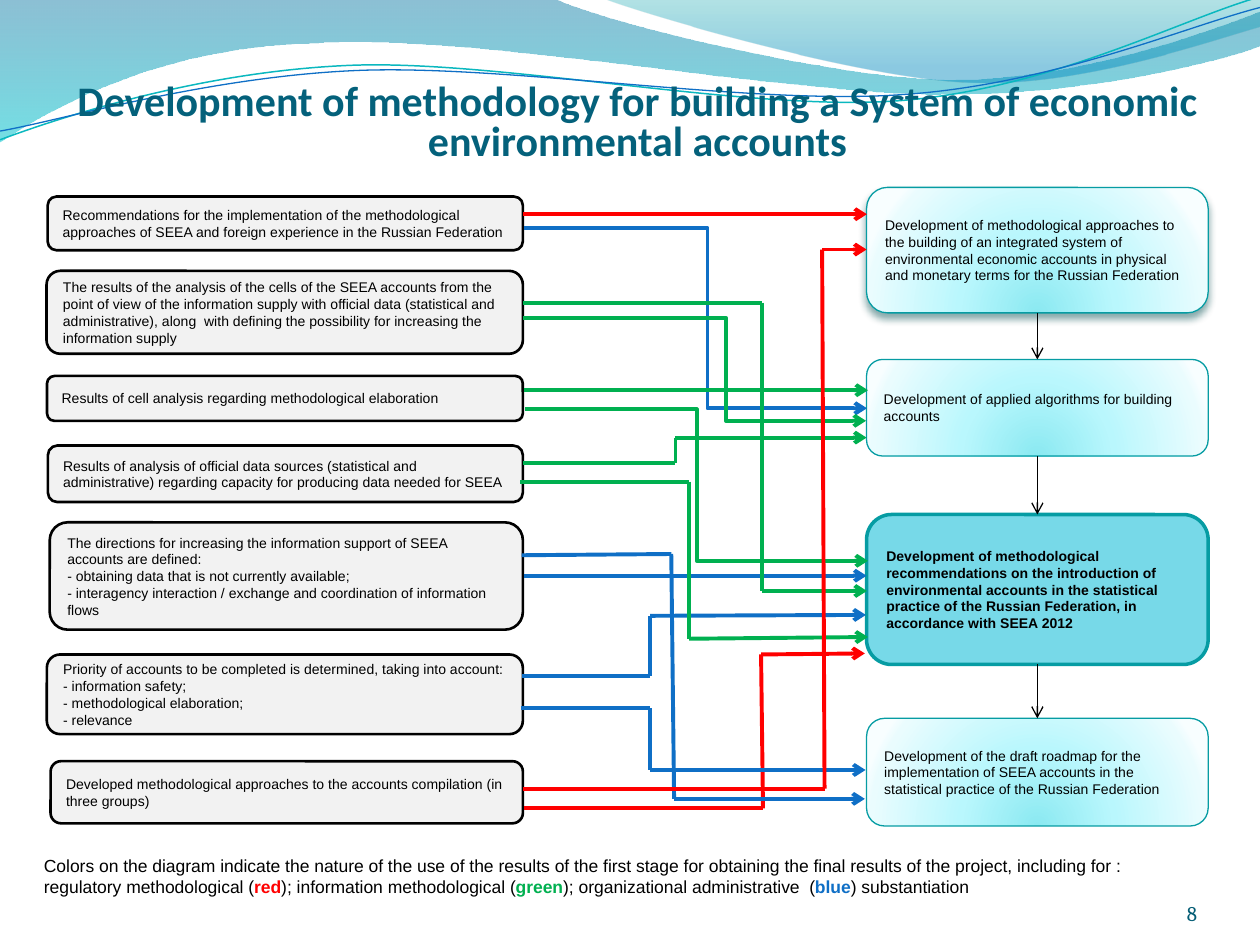
import math

from lxml import etree
from pptx import Presentation
from pptx.dml.color import RGBColor
from pptx.enum import shapes, text
from pptx.oxml import parse_xml
from pptx.oxml.ns import qn
from pptx.util import Pt

NAMESPACE = 'xmlns:a="http://schemas.openxmlformats.org/drawingml/2006/main"'
RED, GREEN, BLUE = "FF0000", "00B050", "0F6FC6"
BLACK, GREY, TEAL = "000000", "F2F2F2", "069CA3"
STRAIGHT, ELBOW = shapes.MSO_CONNECTOR.STRAIGHT, shapes.MSO_CONNECTOR.ELBOW

# Gradients: (position %, colour, opacity %) and direction
CIRCLE = ('<a:path path="circle"><a:fillToRect l="50000" t="130000" '
          'r="50000" b="-30000"/></a:path>')
DOWNWARD = '<a:lin ang="5400000" scaled="0"/>'
GLOW = [(0, "8BE9F1", 100), (43, "B9F7FD", 100), (93, "EAFCFE", 100), (100, "F8FEFF", 100)]

# Each wave: start point, then cubic curves or single points
WAVE_BACK = [(0, 0), (316.8, -0.7), (342.7, 12.2, 478.1, 45.4, 545.8, 45.4),
             (614.2, 45.4, 689.8, 18.7, 720, 6.5), (720.7, 25.9),
             (707.8, 31.7, 626.4, 54.7, 537.1, 54), (447.8, 54, 275, 20.2, 185, 24.5),
             (92.9, 25.9, 33.1, 59.8, -0.7, 81.4)]
WAVE_RIGHT = [(344.9, -0.7), (366.5, 7.9, 491, 44.6, 553.7, 46.8),
              (616.3, 49.7, 691.9, 23, 720, 15.1), (720, 0)]
CURVE_TEAL = [(0, 79.9), (34.6, 67, 113.8, 41, 199.4, 37.4),
              (284.4, 33.8, 427, 64.1, 513.4, 57.6), (599.8, 51.1, 675.4, 10.8, 718.6, -1.4)]
CURVE_BLUE = [(0, 74.9), (33.8, 69.1, 118.1, 43.9, 203.8, 40.3),
              (290.2, 36.7, 429.8, 60.5, 516.2, 54), (601.9, 48.2, 677.5, 15.1, 720, 4.3)]

# Source boxes: left, top, height, paragraphs
SOURCES = [
    (27.2, 112.3, 30.7, ["Recommendations for the implementation of the methodological approaches of SEEA and foreign experience in the Russian Federation"]),
    (26.6, 154.8, 47.4, ["The results of the analysis of the cells of the SEEA accounts from the point of view of the information supply with official data (statistical and administrative), along  with defining the possibility for increasing the information supply"]),
    (28.9, 435, 35.5, ["Developed methodological approaches to the accounts compilation (in three groups)"]),
    (26.9, 214.8, 25.7, ["Results of cell analysis regarding methodological elaboration"]),
    (27.4, 254.6, 32.3, ["Results of analysis of official data sources (statistical and administrative) regarding capacity for producing data needed for SEEA"]),
    (26.8, 374, 45.5, ["Priority of accounts to be completed is determined, taking into account:",
                       "- information safety;", "- methodological elaboration;", "- relevance"]),
    (28.4, 298.5, 61.3, ["The directions for increasing the information support of SEEA accounts are defined:",
                         "- obtaining data that is not currently available;",
                         "- interagency interaction / exchange and coordination of information flows"]),
]
# Result boxes: top, height, text
RESULTS = [
    (107.1, 71.7, "Development of methodological approaches to the building of an integrated system of environmental economic accounts in physical and monetary terms for the Russian Federation"),
    (205.4, 55.2, "Development of applied algorithms for building accounts"),
    (294, 85.7, "Development of methodological recommendations on the introduction of environmental accounts in the statistical practice of the Russian Federation, in accordance with SEEA 2012"),
    (410.5, 61.5, "Development of the draft roadmap for the implementation of SEEA accounts in the statistical practice of the Russian Federation"),
]
HIGHLIGHTED = 2
# Routes drawn leg by leg through their corners; the last leg has the arrowhead
ROUTES = [
    (RED, [(299, 122.4), (495.4, 122.4)]),
    (RED, [(299.5, 461.9), (436, 461.9), (434.9, 374), (494.2, 373.4)]),
    (BLUE, [(298.1, 386.1), (371.5, 386.1), (371.5, 351.9), (494.8, 351.4)]),
    (BLUE, [(299.3, 329), (495.2, 329)]),
    (BLUE, [(297.7, 404.6), (371.2, 404.6), (371.2, 440), (494.6, 440)]),
    (BLUE, [(298.1, 317.3), (383.6, 316.6), (385.2, 456.5), (494.2, 456.5)]),
    (GREEN, [(298.8, 264.7), (386, 264.7), (386, 250.1), (495.2, 250.1)]),
    (GREEN, [(298.8, 173), (435.6, 173), (435.6, 337.7), (495.4, 337.7)]),
    (GREEN, [(297.4, 275.3), (393.8, 275.3), (393.8, 365), (496, 364)]),
    (GREEN, [(299.5, 223), (496, 223)]),
    (RED, [(298.8, 450.7), (471.2, 450.7), (469.8, 142.6), (495.2, 142.6)]),
]
# Elbow routes: colour, start, end, share of the width before the bend
ELBOWS = [
    (BLUE, (299.5, 130.3), (495.4, 233.3), 0.535),
    (GREEN, (298.8, 181.6), (494.9, 240.5), 0.592),
    (GREEN, (300.2, 234), (496, 320.5), 0.5),
]


def color(value):
    return RGBColor.from_string(value)


def format_run(run, size, value, font="Arial", bold=False):
    run.font.size, run.font.name, run.font.bold = Pt(size), font, bold
    run.font.color.rgb = color(value)


def fill_gradient(shape, stops, direction):
    stop_xml = "".join(
        f'<a:gs pos="{position * 1000}"><a:srgbClr val="{value}">'
        f'<a:alpha val="{opacity * 1000}"/></a:srgbClr></a:gs>'
        for position, value, opacity in stops)
    shape.fill.background()
    properties = shape._element.spPr
    properties.replace(properties.find(qn("a:noFill")), parse_xml(
        f'<a:gradFill {NAMESPACE} rotWithShape="1"><a:gsLst>{stop_xml}</a:gsLst>{direction}</a:gradFill>'))


def turn(step, angle, center):
    """Rotate every point of a path step about the center."""
    cosine, sine = math.cos(math.radians(angle)), math.sin(math.radians(angle))
    turned = []
    for x, y in zip(step[::2], step[1::2]):
        dx, dy = x - center[0], y - center[1]
        turned += [center[0] + dx * cosine - dy * sine, center[1] + dx * sine + dy * cosine]
    return turned


def add_wave(slide, curve, closed):
    """Build the outline from its end points, then bend the curved steps."""
    builder = slide.shapes.build_freeform(*map(Pt, curve[0]))
    builder.add_line_segments([tuple(map(Pt, step[-2:])) for step in curve[1:]], close=closed)
    shape = builder.convert_to_shape()
    shape.shadow.inherit = False
    for line, step in zip(list(shape._element.iter(qn("a:lnTo"))), curve[1:]):
        if len(step) == 6:
            bend = etree.Element(qn("a:cubicBezTo"))
            for x, y in zip(step[::2], step[1::2]):
                etree.SubElement(bend, qn("a:pt"), x=str(Pt(x) - shape.left), y=str(Pt(y) - shape.top))
            line.getparent().replace(line, bend)
    return shape


def add_waves(slide):
    for curve, stops in ((WAVE_BACK, [(0, "0074A1", 45), (100, "00C6CF", 55)]),
                         (WAVE_RIGHT, [(0, "00A1A9", 30), (80, "008BBF", 45)])):
        wave = add_wave(slide, curve, True)
        fill_gradient(wave, stops, DOWNWARD)
        wave.line.fill.background()
    for curve, value, width in ((CURVE_TEAL, "0AB8BF", 0.85), (CURVE_BLUE, BLUE, 0.75)):
        wave = add_wave(slide, [turn(step, 2.7, (359.6, 42)) for step in curve], False)
        wave.rotation = 357.3
        wave.fill.background()
        wave.line.color.rgb, wave.line.width = color(value), Pt(width)


def set_title(slide, left, top, width, height):
    title = slide.shapes.title
    slide.shapes._spTree.append(title._element)  # in front of the waves
    title.left, title.top, title.width, title.height = map(Pt, (left, top, width, height))
    frame = title.text_frame
    frame.text = "Development of methodology for building a System of economic environmental accounts"
    frame.auto_size, frame.vertical_anchor = text.MSO_AUTO_SIZE.NONE, text.MSO_ANCHOR.BOTTOM
    frame.margin_left = frame.margin_right = frame.margin_bottom = 0
    frame.margin_top = Pt(3.6)
    paragraph = frame.paragraphs[0]
    paragraph.alignment, paragraph.line_spacing = text.PP_ALIGN.CENTER, 0.8
    format_run(paragraph.runs[0], 24, "04617B", "Calibri", True)


def add_box(slide, left, top, width, height, lines, outline, line_width, bold=False):
    box = slide.shapes.add_shape(shapes.MSO_SHAPE.ROUNDED_RECTANGLE,
                                 *map(Pt, (left, top, width, height)))
    box.shadow.inherit = False
    box.line.color.rgb, box.line.width = color(outline), Pt(line_width)
    frame = box.text_frame
    frame.word_wrap, frame.vertical_anchor = True, text.MSO_ANCHOR.MIDDLE
    frame.text = "\n".join(lines)
    for paragraph in frame.paragraphs:
        paragraph.alignment = text.PP_ALIGN.LEFT
        format_run(paragraph.runs[0], 8, BLACK, bold=bold)
    return box


def add_sources(slide, right):
    for left, top, height, lines in SOURCES:
        box = add_box(slide, left, top, right - left, height, lines, BLACK, 1.5)
        box.fill.solid()
        box.fill.fore_color.rgb = color(GREY)


def add_line(slide, kind, start, end, value, width, head=True):
    line = slide.shapes.add_connector(kind, *map(Pt, start + end))
    line.line.color.rgb, line.line.width = color(value), Pt(width)
    if head:
        etree.SubElement(line.line._get_or_add_ln(), qn("a:tailEnd"), type="arrow")
    etree.SubElement(line._element.spPr, qn("a:effectLst"))
    return line


def add_results(slide, left, width):
    boxes = []
    for index, (top, height, label) in enumerate(RESULTS):
        strong = index == HIGHLIGHTED
        box = add_box(slide, left, top, width, height, [label], TEAL, 2 if strong else 0.75, strong)
        if strong:
            box.fill.solid()
            box.fill.fore_color.rgb = color("77D9E8")
        else:
            fill_gradient(box, GLOW, CIRCLE)
        boxes.append(box)
    # Soft shadow under the first result
    boxes[0]._element.spPr.find(qn("a:effectLst")).append(parse_xml(
        f'<a:outerShdw {NAMESPACE} blurRad="57150" dist="38100" dir="5400000" rotWithShape="0">'
        '<a:srgbClr val="024B4E"><a:alpha val="48000"/></a:srgbClr></a:outerShdw>'))
    for upper, lower in zip(boxes, boxes[1:]):
        arrow = add_line(slide, STRAIGHT, (0, 0), (0, 0), BLACK, 0.75)
        arrow.begin_connect(upper, 2)
        arrow.end_connect(lower, 0)


def add_routes(slide):
    for value, start, end, share in ELBOWS:
        arrow = add_line(slide, ELBOW, start, end, value, 2.25)
        guides = arrow._element.spPr.find(qn("a:prstGeom")).get_or_add_avLst()
        etree.SubElement(guides, qn("a:gd"), name="adj1", fmla=f"val {round(share * 100000)}")
    for value, corners in ROUTES:
        for start, end in zip(corners, corners[1:]):
            add_line(slide, STRAIGHT, start, end, value, 2.25, head=end == corners[-1])


def add_legend(slide, left, top, width, height):
    frame = slide.shapes.add_textbox(*map(Pt, (left, top, width, height))).text_frame
    frame.word_wrap = True
    for words, value in (
            ("Colors on the diagram indicate the nature of the use of the results of the first stage for obtaining the final results of the project, including for : regulatory methodological (", BLACK),
            ("red", RED), ("); information methodological (", BLACK), ("green", GREEN),
            ("); organizational administrative  (", BLACK), ("blue", BLUE), (") substantiation", BLACK)):
        run = frame.paragraphs[0].add_run()
        run.text = words
        format_run(run, 10, value, bold=value != BLACK)


def add_page_number(slide, left, top, width, height):
    frame = slide.shapes.add_textbox(*map(Pt, (left, top, width, height))).text_frame
    frame.margin_left = frame.margin_top = frame.margin_right = frame.margin_bottom = 0
    frame.word_wrap, frame.vertical_anchor = True, text.MSO_ANCHOR.BOTTOM
    frame.text = "8"
    frame.paragraphs[0].alignment = text.PP_ALIGN.RIGHT
    format_run(frame.paragraphs[0].runs[0], 12, "045D75", "Cambria")


def main():
    presentation = Presentation()
    presentation.slide_width, presentation.slide_height = Pt(720), Pt(540)
    slide = presentation.slides.add_slide(presentation.slide_layouts[5])
    add_waves(slide)
    set_title(slide, 40.3, 43.2, 648, 51.1)
    add_page_number(slide, 624, 500.4, 60, 28.8)
    add_results(slide, 495.2, 195.2)
    add_sources(slide, 298.8)
    add_routes(slide)
    add_legend(slide, 18, 485.3, 652.3, 31.7)
    presentation.save("out.pptx")


if __name__ == "__main__":
    main()
